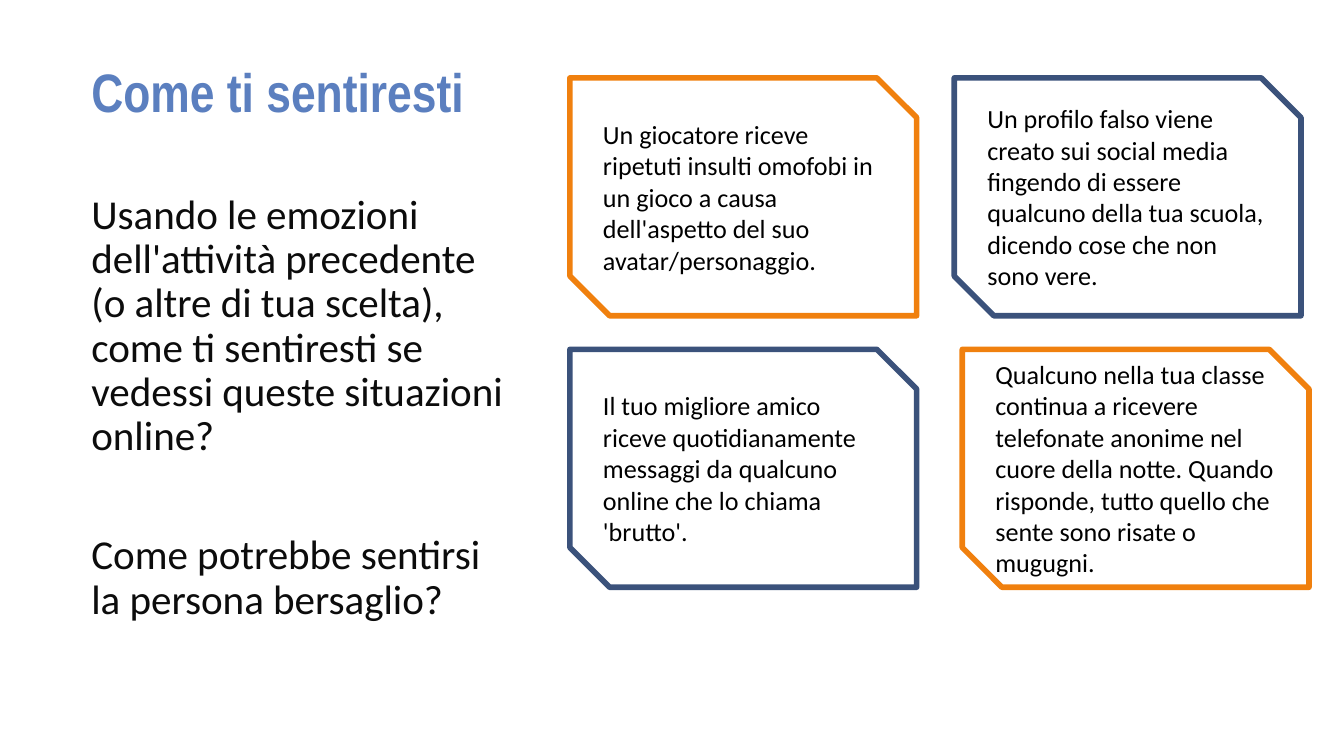
from pptx import Presentation
from pptx.dml.color import RGBColor
from pptx.enum import shapes, text
from pptx.oxml import xmlchemy
from pptx.util import Inches, Pt

BLUE = RGBColor(0x5B, 0x7F, 0xBF)
NAVY = RGBColor(0x3B, 0x52, 0x7B)
ORANGE = RGBColor(0xF0, 0x80, 0x0E)
INK = RGBColor(0x0C, 0x0C, 0x0C)
BLACK = RGBColor(0, 0, 0)

TITLE = "Come ti sentiresti"
QUESTIONS = [
    "Usando le emozioni dell'attività precedente (o altre di tua scelta), "
    "come ti sentiresti se vedessi queste situazioni online?",
    "Come potrebbe sentirsi la persona bersaglio?",
]
# Each row: offset of its right-hand card, then (line colour, wording) pairs
SITUATIONS = [
    (2.86, [
        (ORANGE, "Un giocatore riceve ripetuti insulti omofobi in un gioco "
                 "a causa dell'aspetto del suo avatar/personaggio."),
        (NAVY, "Un profilo falso viene creato sui social media fingendo di essere "
               "qualcuno della tua scuola, dicendo cose che non sono vere."),
    ]),
    (2.92, [
        (NAVY, "Il tuo migliore amico riceve quotidianamente messaggi da "
               "qualcuno online che lo chiama 'brutto'."),
        (ORANGE, "Qualcuno nella tua classe continua a ricevere telefonate anonime "
                 "nel cuore della notte. Quando risponde, tutto quello che sente "
                 "sono risate o mugugni."),
    ]),
]
CARD_WIDTH, CARD_HEIGHT, ROW_STEP = 2.58, 1.77, 2.02


def set_frame(frame, anchor, side, end):
    frame.word_wrap = True
    frame.auto_size = text.MSO_AUTO_SIZE.NONE
    frame.vertical_anchor = anchor
    frame.margin_left = frame.margin_right = Inches(side)
    frame.margin_top = frame.margin_bottom = Inches(end)


def place(shape, left, top, width, height):
    shape.left, shape.top = Inches(left), Inches(top)
    shape.width, shape.height = Inches(width), Inches(height)


def write(para, words, font, size, colour, bold=False):
    para.alignment = text.PP_ALIGN.LEFT
    span = para.add_run()
    span.text = words
    span.font.name, span.font.size, span.font.bold = font, Pt(size), bold
    span.font.color.rgb = colour


def add_title(page, left, top, width, height):
    title = page.shapes.title
    place(title, left, top, width, height)
    set_frame(title.text_frame, text.MSO_ANCHOR.MIDDLE, 0.07, 0.04)
    para = title.text_frame.paragraphs[0]
    para.line_spacing = 0.9
    write(para, TITLE, "Arial Narrow", 29, BLUE, bold=True)


def add_questions(page, left, top, width, height):
    body = page.placeholders[1]
    place(body, left, top, width, height)
    frame = body.text_frame
    set_frame(frame, text.MSO_ANCHOR.TOP, 0.07, 0.04)
    for index, words in enumerate(QUESTIONS):
        para = frame.add_paragraph() if index else frame.paragraphs[0]
        properties = para._p.get_or_add_pPr()
        properties.set("marL", "0")
        properties.set("indent", "0")
        properties.append(xmlchemy.OxmlElement("a:buNone"))
        para.line_spacing = 0.9
        para.space_before = Pt(40 if index else 0)
        write(para, words, "Calibri", 22, INK)


def add_card(page, left, top, colour, words):
    card = page.shapes.add_shape(
        shapes.MSO_SHAPE.SNIP_2_DIAG_RECTANGLE,
        Inches(left), Inches(top), Inches(CARD_WIDTH), Inches(CARD_HEIGHT))
    card.adjustments[0], card.adjustments[1] = 0, 0.167
    card.shadow.inherit = False
    card.fill.background()
    card.line.color.rgb = colour
    card.line.width = Pt(3)
    set_frame(card.text_frame, text.MSO_ANCHOR.MIDDLE, 0.1, 0.1)
    write(card.text_frame.paragraphs[0], words, "Calibri", 14, BLACK)


def add_situations(page, left, top):
    for row, (right_offset, cards) in enumerate(SITUATIONS):
        for offset, (colour, words) in zip((0, right_offset), cards):
            add_card(page, left + offset, top + row * ROW_STEP, colour, words)


def main():
    deck = Presentation()
    # 16:9 page
    deck.slide_width = Inches(10)
    deck.slide_height = deck.slide_width * 9 // 16
    page = deck.slides.add_slide(deck.slide_layouts[1])
    add_title(page, 0.61, 0.37, 8.77, 0.67)
    add_questions(page, 0.61, 1.4, 3.3, 3.68)
    add_situations(page, 4.24, 0.58)
    deck.save("out.pptx")


if __name__ == "__main__":
    main()
